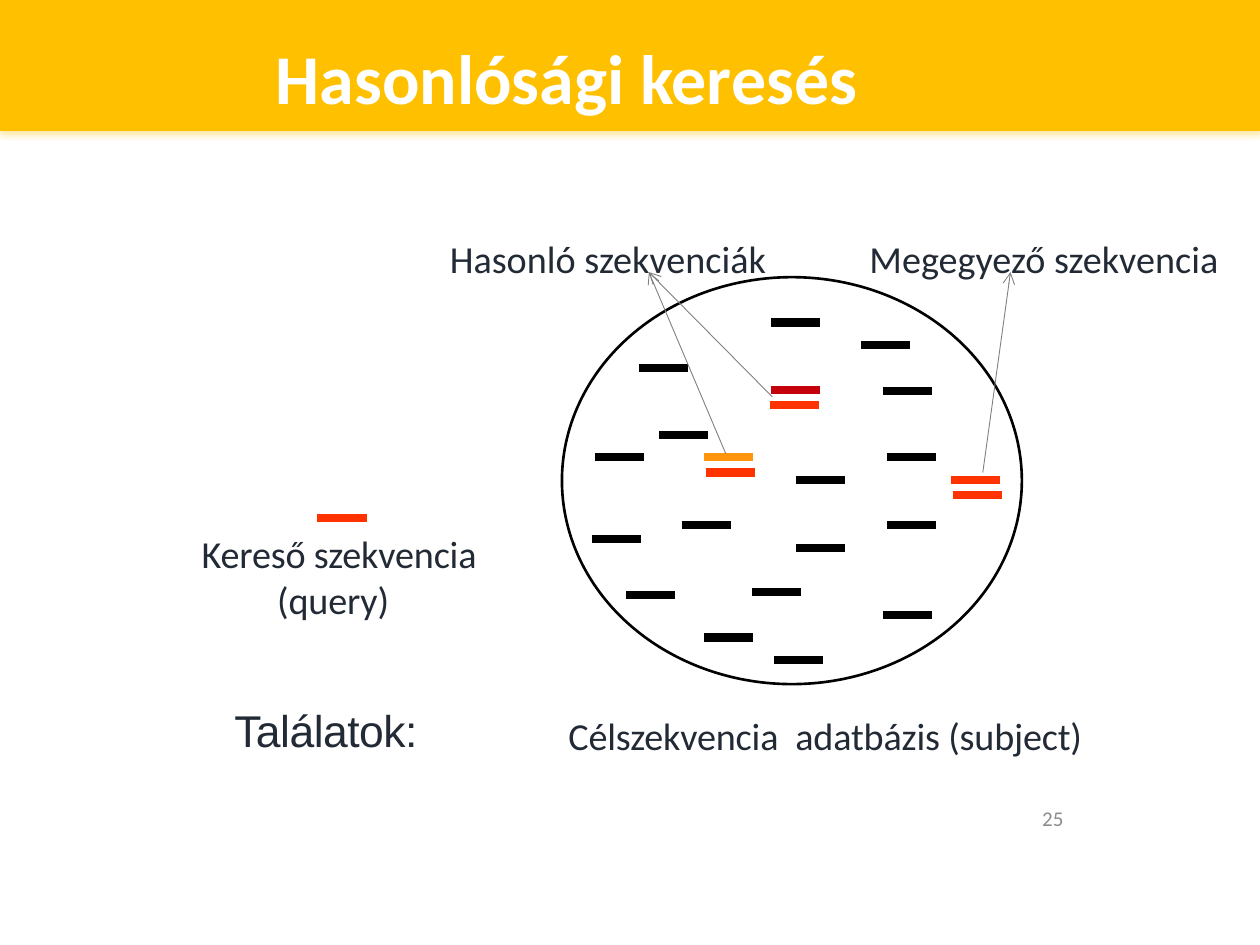
from lxml.etree import SubElement
from pptx import Presentation
from pptx.dml.color import RGBColor
from pptx.enum.shapes import MSO_CONNECTOR as CONN, MSO_SHAPE as SHAPE
from pptx.enum.text import MSO_ANCHOR as ANCHOR, PP_ALIGN as ALIGN
from pptx.oxml.ns import qn
from pptx.util import Inches, Pt

COLS, ROWS = 100, 75
BLACK, RED, CRIMSON, ORANGE = "000000", "FF3300", "C4000A", "FF940D"
GOLD, WHITE, INK, GRAY, PALE = "FFC000", "FFFFFF", "222A35", "808080", "8C8C8C"


def color(value):
    return RGBColor.from_string(value)


class SlideBuilder:
    font = "Calibri"
    dash_cols = 3.9
    dash_pt = 4.65

    def __init__(self, prs):
        self.s = prs.slides.add_slide(prs.slide_layouts[6])
        self.col = prs.slide_width / COLS
        self.row = prs.slide_height / ROWS

    def place(self, x, y):
        return round(x * self.col), round(y * self.row)

    def band(self, x, y, w, h, fill):
        sp = self.s.shapes.add_shape(SHAPE.RECTANGLE, *self.place(x, y), *self.place(w, h))
        sp.shadow.inherit = False
        sp.fill.solid()
        sp.fill.fore_color.rgb = color(fill)
        sp.line.fill.background()
        effects = sp._element.spPr.find(qn("a:effectLst"))
        shadow = SubElement(effects, qn("a:outerShdw"), blurRad=str(Pt(3.5)),
                            dist=str(Pt(2.2)), dir="5400000", rotWithShape="0")
        rgb = SubElement(shadow, qn("a:srgbClr"), val=fill)
        SubElement(rgb, qn("a:alpha"), val="32000")

    def ring(self, x, y, w, h):
        sp = self.s.shapes.add_shape(SHAPE.OVAL, *self.place(x, y), *self.place(w, h))
        sp.shadow.inherit = False
        sp.fill.background()
        sp.line.color.rgb = color(BLACK)
        sp.line.width = Pt(1.5)

    def line(self, start, end, tone, width):
        sp = self.s.shapes.add_connector(CONN.STRAIGHT, *self.place(*start), *self.place(*end))
        sp.line.color.rgb = color(tone)
        sp.line.width = Pt(width)
        SubElement(sp._element.spPr, qn("a:effectLst"))
        return sp

    def dash(self, x, y, tone=BLACK):
        self.line((x, y), (x + self.dash_cols, y), tone, self.dash_pt)

    def arrow(self, start, end):
        sp = self.line(start, end, GRAY, 0.5)
        SubElement(sp.line._get_or_add_ln(), qn("a:tailEnd"), type="arrow")

    def text(self, x, y, w, h, words, size=21.8, tone=INK, font=None, bold=False,
             align=ALIGN.LEFT, anchor=ANCHOR.TOP, spacing=0, hang=0):
        tf = self.s.shapes.add_textbox(*self.place(x, y), *self.place(w, h)).text_frame
        tf.word_wrap = True
        tf.vertical_anchor = anchor
        tf.margin_left = tf.margin_right = tf.margin_bottom = 0
        tf.margin_top = Inches(0.01)
        p = tf.paragraphs[0]
        p.text = words
        p.alignment = align
        p.space_before = Pt(0.9)
        if hang:
            pPr = p._p.get_or_add_pPr()
            pPr.set("marL", str(round(hang * self.col)))
            pPr.set("indent", str(round(-hang * self.col)))
        for r in p.runs:
            r.font.name = font or self.font
            r.font.size = Pt(size)
            r.font.bold = bold
            r.font.color.rgb = color(tone)
            r._r.get_or_add_rPr().set("spc", str(round(spacing * 100)))


def main():
    prs = Presentation()
    prs.slide_width, prs.slide_height = Inches(10), Inches(7.5)
    b = SlideBuilder(prs)

    b.band(0, 0, COLS, 10.4, GOLD)
    b.text(21.9, 2.6, 55.4, 6.8, "Hasonlósági keresés", 39.9, WHITE,
           bold=True, anchor=ANCHOR.MIDDLE)
    b.text(64, 63.9, 20.4, 2, "25", 12, PALE, align=ALIGN.RIGHT, anchor=ANCHOR.MIDDLE)

    database = [(61.2, 25.6), (68.3, 27.4), (50.7, 29.2), (70.1, 31), (52.3, 34.5),
                (47.2, 36.3), (70.4, 36.3), (63.2, 38.1), (54.1, 41.7), (70.4, 41.7),
                (47, 42.8), (63.2, 43.5), (59.7, 47), (49.7, 47.2), (70.1, 48.8),
                (55.9, 50.6), (61.4, 52.4)]
    for x, y in database:
        b.dash(x, y)
    b.ring(44.6, 22, 36.5, 32.3)

    hits = [(61.2, 30.95, CRIMSON, -0.1), (55.9, 36.3, ORANGE, 0.1), (75.5, 38.1, RED, 0.1)]
    for x, y, tone, shift in hits:
        b.dash(x, y, tone)
        b.dash(x + shift, y + 1.2, RED)
    b.dash(25.2, 41.1, RED)

    similar, identical = (51.5, 21.6), (80.2, 21.6)
    for start, end in [((78, 37.5), identical), ((61.3, 31.5), similar), ((57.6, 36), similar)]:
        b.arrow(start, end)

    b.text(35.7, 18.6, 25.7, 3.8, "Hasonló szekvenciák")
    b.text(69, 18.6, 29.5, 3.8, "Megegyező szekvencia")
    b.text(16, 42, 25.5, 7.5, "Kereső szekvencia\v(query)", spacing=-0.1, hang=6)
    b.text(41.7, 56.4, 47.6, 3.8, "Célszekvencia  adatbázis (subject)",
           align=ALIGN.CENTER, spacing=-0.1)
    b.text(18.6, 55.7, 15.6, 4.4, "Találatok:", 25.4, font="Arial", spacing=-0.3)

    prs.save("out.pptx")


if __name__ == "__main__":
    main()
